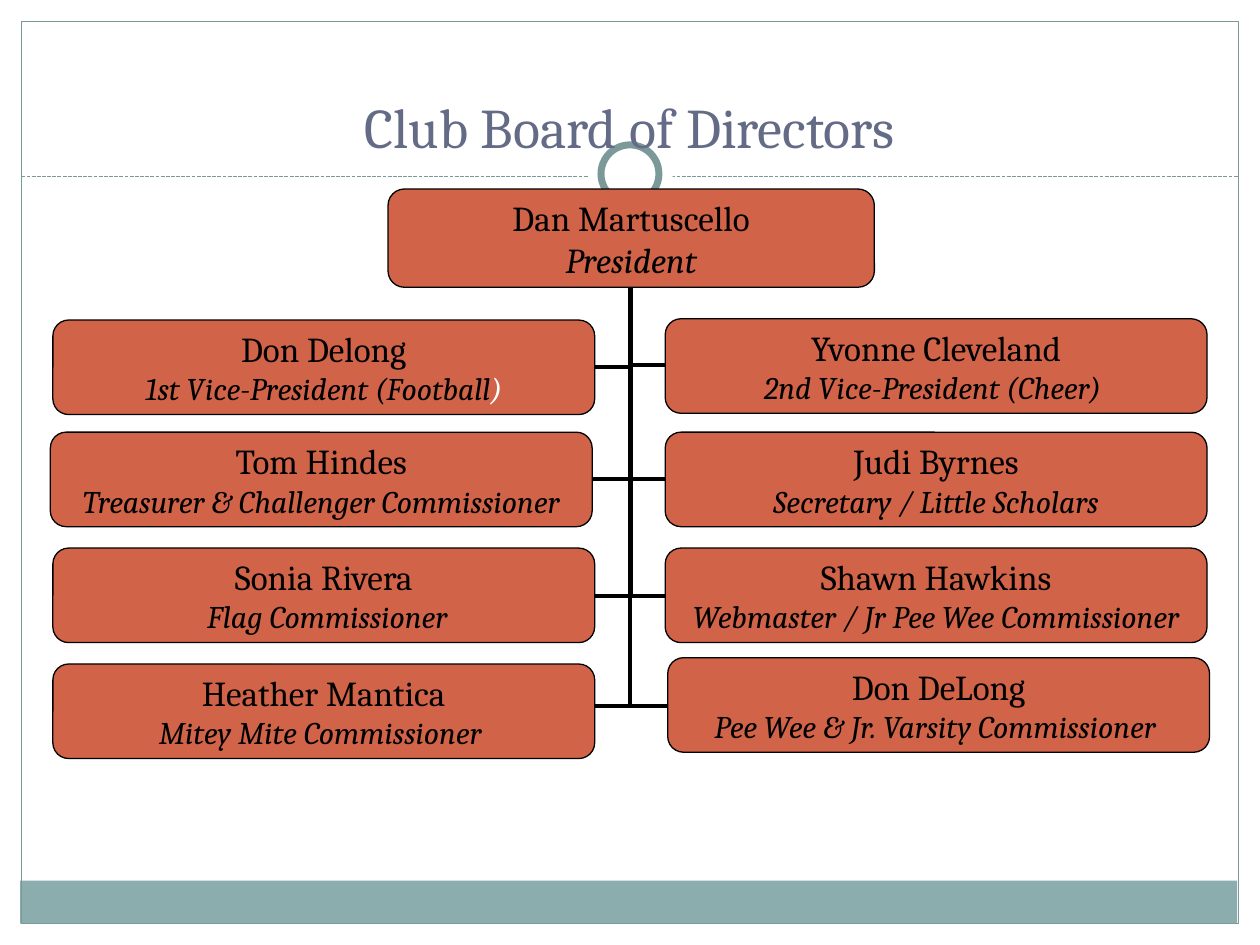
import pptx
import pptx.util
import pptx.oxml
import pptx.dml.color
import pptx.enum.dml
import pptx.enum.shapes
import pptx.enum.text
from pptx.util import Inches

COLOURS = {"white": "FFFFFF", "black": "000000", "teal": "8CADAE",
           "frame": "7C999A", "title": "646B86", "box": "D16349"}
SHAPES = pptx.enum.shapes.MSO_SHAPE
CONNECTORS = pptx.enum.shapes.MSO_CONNECTOR
ANCHORS = pptx.enum.text.MSO_ANCHOR

TRUNK_X = 5.01
PRESIDENT = (3.08, 1.5, 3.86, 0.78)
PRESIDENT_BOTTOM = PRESIDENT[1] + PRESIDENT[3]
BOX_WIDTH, BOX_HEIGHT = 4.3, 0.75

# left, top, name, role
DIRECTORS = [
    (0.42, 2.54, "Don Delong", "1st Vice-President (Football"),
    (5.28, 2.53, "Yvonne Cleveland", "2nd Vice-President (Cheer) "),
    (0.4, 3.43, "Tom Hindes", "Treasurer & Challenger Commissioner"),
    (5.28, 3.43, "Judi Byrnes", "Secretary / Little Scholars"),
    (0.42, 4.35, "Sonia Rivera", " Flag Commissioner"),
    (5.28, 4.35, "Shawn Hawkins", "Webmaster / Jr Pee Wee Commissioner"),
    (0.42, 5.27, "Heather Mantica", "Mitey Mite Commissioner "),
    (5.3, 5.22, "Don DeLong", "Pee Wee & Jr. Varsity Commissioner "),
]
# start x, start y, end x, end y
BRANCHES = [
    (5.3, 5.6, 5, PRESIDENT_BOTTOM),
    (4.72, 5.6, 5, PRESIDENT_BOTTOM),
    (5.28, 4.73, TRUNK_X, PRESIDENT_BOTTOM),
    (4.72, 4.73, TRUNK_X, PRESIDENT_BOTTOM),
    (5.28, 2.9, TRUNK_X, PRESIDENT_BOTTOM),
    (4.72, 2.91, TRUNK_X, PRESIDENT_BOTTOM),
]


def colour(name):
    return pptx.dml.color.RGBColor.from_string(COLOURS[name])


class OrgChartSlide:
    font = "Cambria"

    def __init__(self, presentation):
        self.slide = presentation.slides.add_slide(presentation.slide_layouts[5])

    def add_run(self, paragraph, text, size, color="black", italic=False):
        run = paragraph.add_run()
        run.text = text
        run.font.name = self.font
        run.font.size = pptx.util.Pt(size)
        run.font.italic = italic
        run.font.color.rgb = colour(color)

    def add_title(self, text, *bounds):
        """Place the title in front of whatever has been drawn so far."""
        title = self.slide.shapes.title
        title.left, title.top, title.width, title.height = map(Inches, bounds)
        title.text_frame.vertical_anchor = ANCHORS.BOTTOM
        paragraph = title.text_frame.paragraphs[0]
        paragraph.alignment = pptx.enum.text.PP_ALIGN.CENTER
        self.add_run(paragraph, text, 32, "title")
        title.element.getparent().append(title.element)

    def add_shape(self, kind, bounds, fill=None, line=None, line_width=0.75):
        shape = self.slide.shapes.add_shape(kind, *map(Inches, bounds))
        shape.shadow.inherit = False
        if fill:
            shape.fill.solid()
            shape.fill.fore_color.rgb = colour(fill)
        else:
            shape.fill.background()
        if line:
            shape.line.color.rgb = colour(line)
            shape.line.width = pptx.util.Pt(line_width)
        else:
            shape.line.fill.background()
        return shape

    def add_connector(self, kind, points, color, width):
        connector = self.slide.shapes.add_connector(kind, *map(Inches, points))
        connector.line.color.rgb = colour(color)
        connector.line.width = pptx.util.Pt(width)
        properties = connector._element.spPr
        properties.append(pptx.oxml.parse_xml(
            '<a:effectLst xmlns:a="http://schemas.openxmlformats.org/drawingml/2006/main"/>'))
        return connector

    def add_branch(self, points):
        """Draw an elbow with a single bend: sideways, then up."""
        connector = self.add_connector(CONNECTORS.ELBOW, points, "black", 2.25)
        connector._element.spPr.prstGeom.set("prst", "bentConnector2")

    def add_person(self, bounds, name, role, role_size=18):
        """Draw a box and return its role paragraph."""
        box = self.add_shape(SHAPES.ROUNDED_RECTANGLE, bounds, "box", "black")
        frame = box.text_frame
        frame.margin_left = frame.margin_right = 0
        frame.margin_top = frame.margin_bottom = 0
        frame.word_wrap = False
        frame.vertical_anchor = ANCHORS.MIDDLE
        name_paragraph, role_paragraph = frame.paragraphs[0], frame.add_paragraph()
        for paragraph in (name_paragraph, role_paragraph):
            paragraph.alignment = pptx.enum.text.PP_ALIGN.CENTER
        self.add_run(name_paragraph, name, 20)
        self.add_run(role_paragraph, role, role_size, italic=True)
        return role_paragraph


def main():
    presentation = pptx.Presentation()
    presentation.slide_width, presentation.slide_height = Inches(10), Inches(7.5)
    chart = OrgChartSlide(presentation)

    chart.add_shape(SHAPES.RECTANGLE, (0.16, 6.99, 9.66, 0.34), "teal")
    chart.add_shape(SHAPES.RECTANGLE, (0.17, 0.17, 9.66, 7.16), line="frame")
    divider = chart.add_connector(CONNECTORS.STRAIGHT, (0.17, 1.4, 9.83, 1.4), "frame", 0.75)
    divider.line.dash_style = pptx.enum.dml.MSO_LINE.SQUARE_DOT
    chart.add_shape(SHAPES.OVAL, (4.67, 1.05, 0.67, 0.67), "white")
    chart.add_shape(SHAPES.OVAL, (4.77, 1.15, 0.46, 0.46), "white", "frame", 4)
    chart.add_title("Club Board of Directors", 0.5, 0.3, 9, 1.02)

    for points in BRANCHES:
        chart.add_branch(points)
    chart.add_connector(CONNECTORS.ELBOW, (4.7, 3.8, 5.28, 3.8), "black", 2.25)

    chart.add_person(PRESIDENT, "Dan Martuscello", "President", role_size=20)
    for left, top, name, role in DIRECTORS:
        role_paragraph = chart.add_person((left, top, BOX_WIDTH, BOX_HEIGHT), name, role)
        if role.endswith("(Football"):
            chart.add_run(role_paragraph, ")", 18, "white", italic=True)

    presentation.save("out.pptx")


if __name__ == "__main__":
    main()
